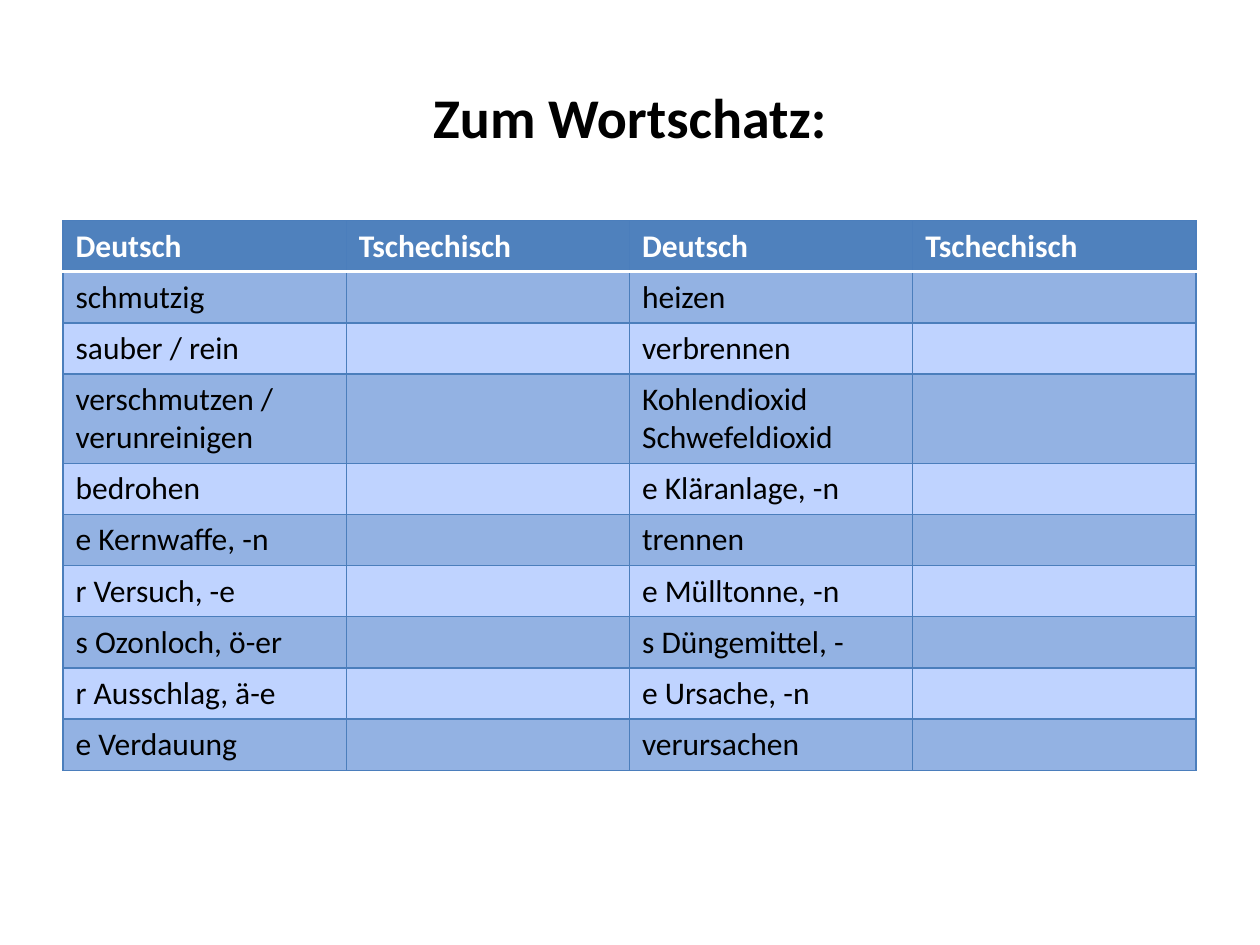
"""Build a German vocabulary slide with a four-column word table."""
from dataclasses import dataclass

from lxml import etree
from pptx import Presentation
from pptx.dml import color
from pptx.enum import text
from pptx.oxml import ns
from pptx.util import Cm, Pt

FONT = "Calibri"
GRID = "4B7EBC"
WHITE = "FFFFFF"
BLACK = "000000"
COLUMN_WIDTH = Cm(5.71)
ROW_HEIGHT = Cm(1.03)

HEADER = ("Deutsch", "Tschechisch", "Deutsch", "Tschechisch")
WORD_PAIRS = (
    ("schmutzig", "heizen"),
    ("sauber / rein", "verbrennen"),
    ("verschmutzen / verunreinigen", "Kohlendioxid\nSchwefeldioxid"),
    ("bedrohen", "e Kläranlage, -n"),
    ("e Kernwaffe, -n", "trennen"),
    ("r Versuch, -e", "e Mülltonne, -n"),
    ("s Ozonloch, ö-er", "s Düngemittel, -"),
    ("r Ausschlag, ä-e", "e Ursache, -n"),
    ("e Verdauung", "verursachen"),
)


@dataclass(frozen=True)
class RowStyle:
    """Look of one table row."""
    fill: str
    ink: str = BLACK
    bold: bool = False
    top: tuple = (GRID, 0.75)
    bottom: tuple = (GRID, 0.75)


HEADER_RULE = (WHITE, 2)
HEADER_STYLE = RowStyle("4F81BD", WHITE, True, bottom=HEADER_RULE)
FIRST_STYLE = RowStyle("93B2E3", top=HEADER_RULE)
BAND_STYLES = (RowStyle("93B2E3"), RowStyle("BFD3FF"))


def rgb(value: str) -> color.RGBColor:
    """Turn a hex string into a colour."""
    return color.RGBColor.from_string(value)


def format_font(font, size: float, ink: str, bold: bool) -> None:
    """Apply the slide's font with the given look."""
    for name, value in {"name": FONT, "size": Pt(size), "bold": bold}.items():
        setattr(font, name, value)
    font.color.rgb = rgb(ink)


def add_border(cell, side: str, ink: str, width: float) -> None:
    """Draw one border of a cell."""
    properties = cell._tc.get_or_add_tcPr()
    line = etree.SubElement(properties, ns.qn(f"a:ln{side}"), w=str(Pt(width)))
    fill = etree.SubElement(line, ns.qn("a:solidFill"))
    etree.SubElement(fill, ns.qn("a:srgbClr"), val=ink)


def fill_cell(cell, words: str, style: RowStyle) -> None:
    """Write and format one cell."""
    grid = (GRID, 0.75)
    borders = {"L": grid, "R": grid, "T": style.top, "B": style.bottom}
    for side, border in borders.items():
        add_border(cell, side, *border)
    cell.fill.solid()
    cell.fill.fore_color.rgb = rgb(style.fill)
    cell.text = words
    for para in cell.text_frame.paragraphs:
        for span in para.runs:
            format_font(span.font, 18, style.ink, style.bold)


def add_title(page, words: str) -> None:
    """Place and format the slide title."""
    title = page.shapes.title
    place = {"left": Cm(1.27), "top": Cm(0.76), "width": Cm(22.86), "height": Cm(3.18)}
    for name, value in place.items():
        setattr(title, name, value)
    title.text_frame.text = words
    title.text_frame.vertical_anchor = text.MSO_ANCHOR.MIDDLE
    para = title.text_frame.paragraphs[0]
    para.alignment = text.PP_ALIGN.CENTER
    format_font(para.runs[0].font, 32, BLACK, True)


def add_word_table(page) -> None:
    """Add the word list with empty columns for the translations."""
    rows = [HEADER] + [(left, "", right, "") for left, right in WORD_PAIRS]
    frame = page.shapes.add_table(
        len(rows), len(HEADER), Cm(1.27), Cm(4.45),
        COLUMN_WIDTH * len(HEADER), ROW_HEIGHT * len(rows))
    for column in frame.table.columns:
        column.width = COLUMN_WIDTH
    styles = [HEADER_STYLE, FIRST_STYLE]
    styles += [BAND_STYLES[(index + 1) % 2] for index in range(2, len(rows))]
    for row, values, style in zip(frame.table.rows, rows, styles):
        row.height = ROW_HEIGHT
        for cell, words in zip(row.cells, values):
            fill_cell(cell, words, style)


def main() -> None:
    """Create the deck and save it."""
    deck = Presentation()
    deck.slide_width, deck.slide_height = Cm(25.4), Cm(19.05)
    page = deck.slides.add_slide(deck.slide_layouts.get_by_name("Title Only"))
    add_title(page, "Zum Wortschatz:")
    add_word_table(page)
    deck.save("out.pptx")


if __name__ == "__main__":
    main()
